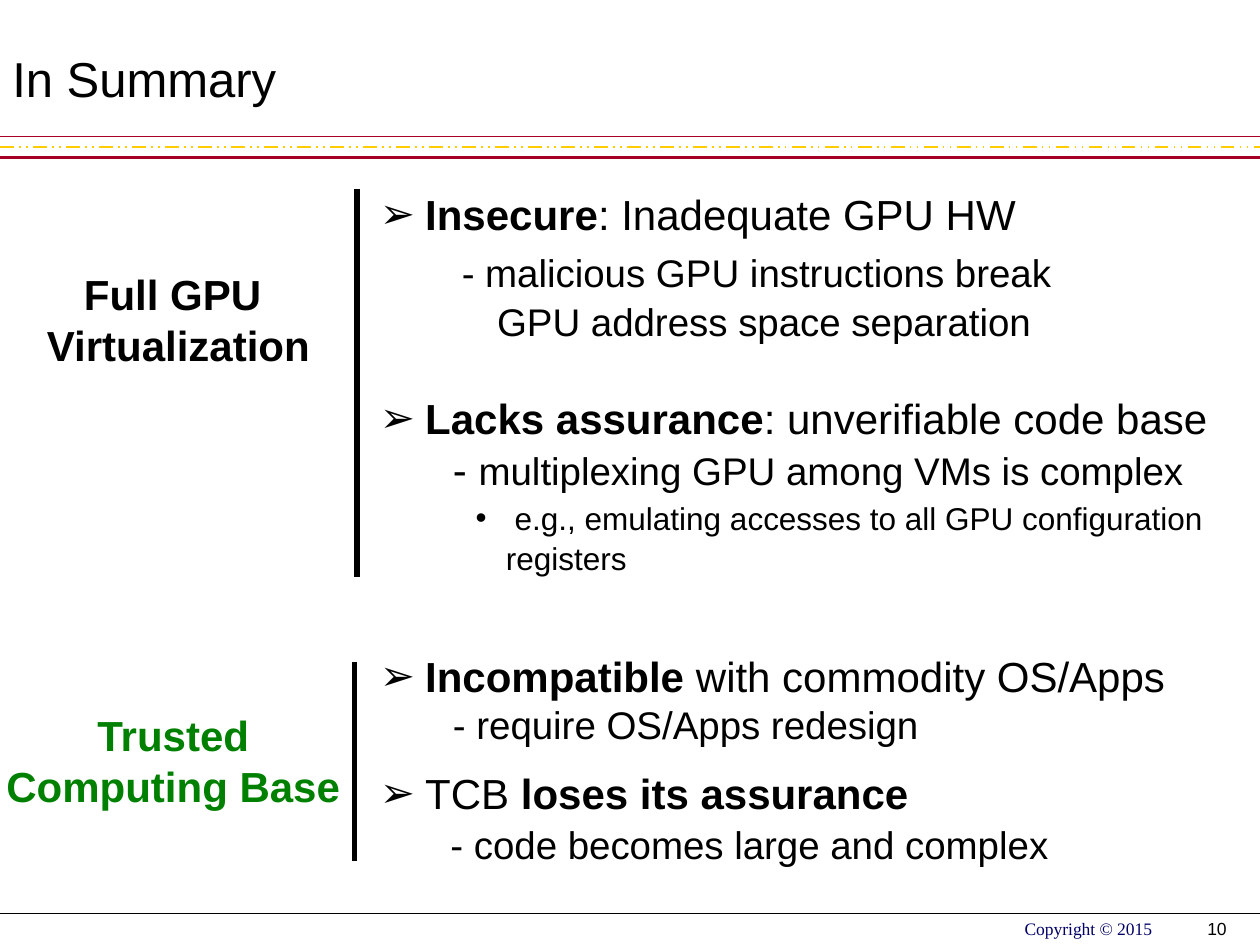
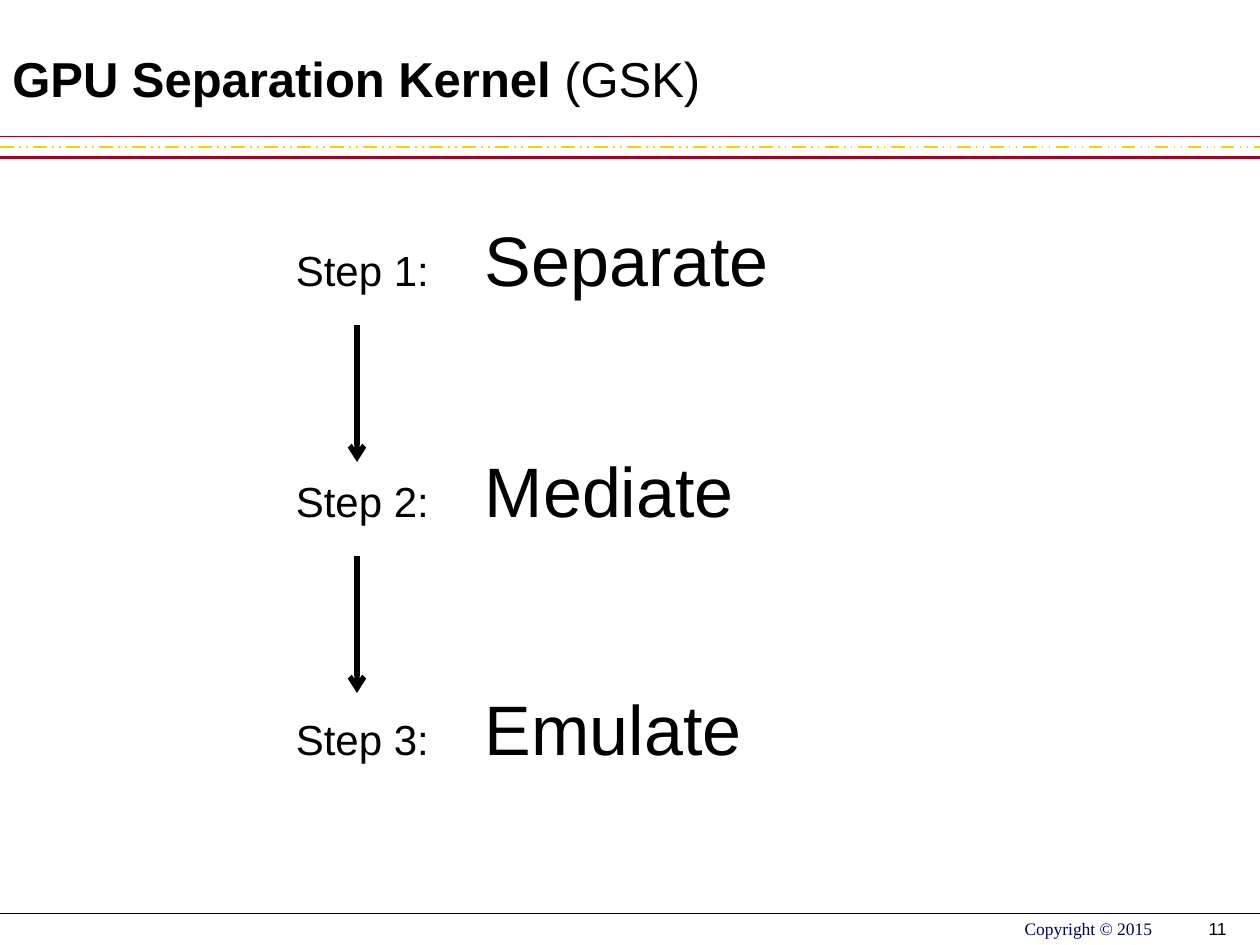
from lxml.etree import SubElement
from pptx import Presentation
from pptx.dml.color import RGBColor
from pptx.enum.dml import MSO_LINE
from pptx.enum.shapes import MSO_CONNECTOR
from pptx.enum.text import PP_ALIGN
from pptx.oxml.ns import qn
from pptx.util import Inches, Pt

# Grid of 120 columns by 90 rows, 12 cells to the inch
CELL = Inches(10) // 120
COLUMNS, ROWS = 120, 90

BLACK, RED, GOLD, NAVY, GREEN = "000000", "A50021", "FFCC00", "000066", "008000"
SANS, SERIF = "Arial", "Times New Roman"
RULE_COLUMN = 34    # vertical rules and step arrows
POINTS_COLUMN = 35  # left edge of the argument texts
ARROWHEAD, DOT = "➢", "•"


def cells(count):
    return round(count * CELL)


def color(hex_string):
    return RGBColor.from_string(hex_string)


def add_line(slide, start, end, hex_string=BLACK, width=3, dash=None, arrow=False):
    line = slide.shapes.add_connector(
        MSO_CONNECTOR.STRAIGHT, *map(cells, start), *map(cells, end))
    line.line.color.rgb = color(hex_string)
    line.line.width = Pt(width)
    if dash:
        line.line.dash_style = dash
    properties = line._element.spPr
    if arrow:
        SubElement(properties.find(qn("a:ln")), qn("a:tailEnd"), type="arrow")
    SubElement(properties, qn("a:effectLst"))


def add_text_box(slide, left, top, width, height):
    box = slide.shapes.add_textbox(*map(cells, (left, top, width, height)))
    box.text_frame.word_wrap = True
    return box.text_frame


def add_paragraph(frame, runs, size=24, before=0, indent=0, hanging=0, bullet=None,
                  tab=None, align=None, font=SANS, hex_string=BLACK, bold=None):
    """Each run is a text, or a (text, bold, size) tuple; indents are in inches."""
    first = frame.paragraphs[0]
    paragraph = first if not first.runs else frame.add_paragraph()
    properties = paragraph._p.get_or_add_pPr()
    properties.set("marL", str(Inches(indent)))
    properties.set("indent", str(-Inches(hanging)))
    if bullet:
        SubElement(properties, qn("a:buFont"), typeface=SANS)
        SubElement(properties, qn("a:buChar"), char=bullet)
    else:
        SubElement(properties, qn("a:buNone"))
    if tab:
        tabs = SubElement(properties, qn("a:tabLst"))
        SubElement(tabs, qn("a:tab"), pos=str(Inches(tab)), algn="l")
    if before:
        paragraph.space_before = Pt(before)
    paragraph.alignment = align
    paragraph.font.name = font
    paragraph.font.size = Pt(size)
    paragraph.font.bold = bold
    paragraph.font.color.rgb = color(hex_string)
    for item in runs:
        text, run_bold, run_size = (item, None, None) if isinstance(item, str) else item
        run = paragraph.add_run()
        run.text = text
        run.font.bold = run_bold
        if run_size:
            run.font.size = Pt(run_size)


def add_point(frame, *runs, before=0):
    add_paragraph(frame, runs, before=before, indent=0.36, hanging=0.36, bullet=ARROWHEAD)


def add_detail(frame, *runs, indent=0.58, before=0):
    add_paragraph(frame, runs, size=22, indent=indent, before=before)


def add_topic(slide, left, top, width, lines, hex_string=BLACK):
    frame = add_text_box(slide, left, top, width, 11)
    for line in lines:
        add_paragraph(frame, [line], align=PP_ALIGN.CENTER, hex_string=hex_string, bold=True)


def add_base_slide(presentation, number, title_runs):
    slide = presentation.slides.add_slide(presentation.slide_layouts[6])
    # Header band and footer rule
    for row, hex_string, width, dash in (
            (14, GOLD, 1, MSO_LINE.DASH_DOT_DOT),
            (13, RED, 0.75, None),
            (15, RED, 2.25, None),
            (87, BLACK, 0.5, None)):
        add_line(slide, (0, row), (COLUMNS, row), hex_string, width, dash)
    # Footer texts
    add_paragraph(add_text_box(slide, 96.4, 86.8, 18, 3.2), ["Copyright © 2015"],
                  size=10, font=SERIF, hex_string=NAVY)
    add_paragraph(add_text_box(slide, 90, 86.8, 28, 3.2), [str(number)],
                  size=10, align=PP_ALIGN.RIGHT)
    # Title
    add_paragraph(add_text_box(slide, 0, 4, 103, 6.8), title_runs, size=28)
    return slide


def build_summary(presentation):
    slide = add_base_slide(presentation, 10, ["In Summary"])

    # Full GPU virtualization
    add_topic(slide, 2, 25, 30, ["Full GPU ", "Virtualization"])
    add_line(slide, (RULE_COLUMN, 18), (RULE_COLUMN, 55))
    frame = add_text_box(slide, POINTS_COLUMN, 17.4, 87, 39.6)
    add_point(frame, ("Insecure", True, None), ": Inadequate GPU HW")
    add_detail(frame, "- malicious GPU instructions break", indent=0.65, before=5.5)
    add_detail(frame, "GPU address space separation", indent=0.93, before=1.5)
    add_point(frame, ("Lacks assurance", True, None), ": unverifiable code base", before=28)
    add_detail(frame, ("- ", None, 24), "multiplexing GPU among VMs is complex")
    add_paragraph(frame, ["e.g., emulating accesses to all GPU configuration"], size=18,
                  before=3, indent=1.07, hanging=0.31, bullet=DOT)
    add_paragraph(frame, ["registers"], size=18, before=1.5, indent=1)

    # Trusted computing base
    add_topic(slide, -2, 67, 37, ["Trusted Computing Base"], GREEN)
    add_line(slide, (RULE_COLUMN - 0.25, 63), (RULE_COLUMN - 0.25, 82))
    frame = add_text_box(slide, POINTS_COLUMN, 61.4, 80, 11)
    add_point(frame, ("Incompatible ", True, None), "with commodity OS/Apps")
    add_detail(frame, "- require OS/Apps redesign")
    frame = add_text_box(slide, POINTS_COLUMN, 72.5, 80, 11)
    add_point(frame, "TCB ", ("loses its assurance", True, None))
    add_detail(frame, "- code becomes large and complex", indent=0.56, before=2)


def build_kernel_steps(presentation):
    slide = add_base_slide(presentation, 11,
                           [("GPU Separation Kernel ", True, None), "(GSK)"])
    steps = (("Separate", 20), ("Mediate", 42), ("Emulate", 64.7))
    for number, (action, row) in enumerate(steps, start=1):
        frame = add_text_box(slide, 27, row, 66, 9.2)
        add_paragraph(frame, [f"Step {number}:\t", (action, None, 40)], tab=1.8)
    # Arrows between steps
    for row in (31, 53):
        add_line(slide, (RULE_COLUMN, row), (RULE_COLUMN, row + 13), arrow=True)


def main():
    presentation = Presentation()
    presentation.slide_width = cells(COLUMNS)
    presentation.slide_height = cells(ROWS)
    build_summary(presentation)
    build_kernel_steps(presentation)
    presentation.save("out.pptx")


if __name__ == "__main__":
    main()
